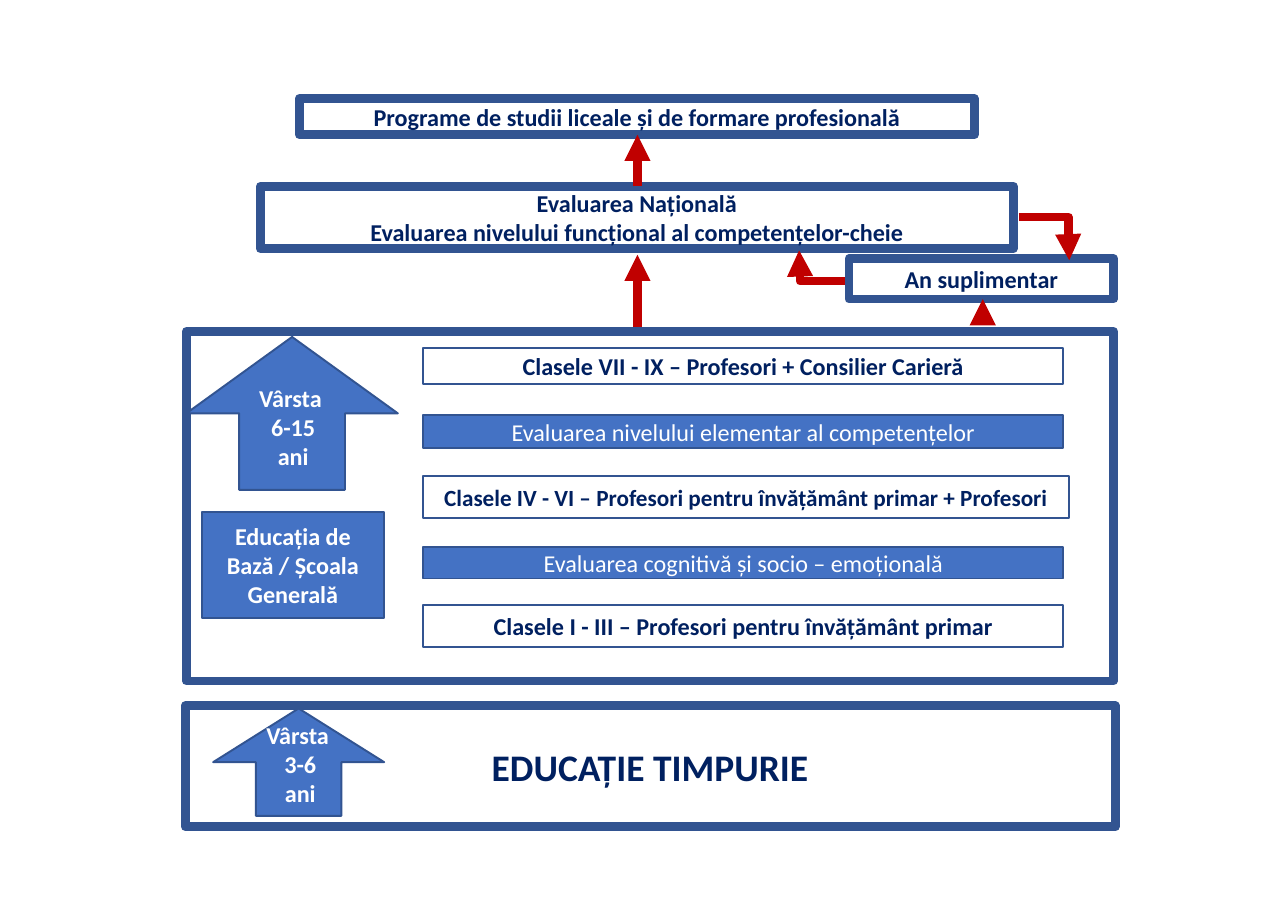
from lxml.etree import SubElement
from pptx import Presentation
from pptx.dml.color import RGBColor
from pptx.enum.shapes import MSO_CONNECTOR as Connector, MSO_SHAPE as Shape
from pptx.enum.text import MSO_ANCHOR as Anchor, MSO_AUTO_SIZE as AutoSize, PP_ALIGN as Align
from pptx.oxml.ns import qn
from pptx.util import Cm, Pt

WHITE, NAVY, BLUE, BORDER, RED = "FFFFFF", "002060", "4472C4", "325491", "C00000"
THICK, THIN = 4.5, 1


def color(value):
    return RGBColor.from_string(value)


def write(shape, lines, size, font_color, bold):
    frame = shape.text_frame
    frame.word_wrap = True
    for index, line in enumerate(lines):
        paragraph = frame.paragraphs[0] if index == 0 else frame.add_paragraph()
        paragraph.alignment = Align.CENTER
        run = paragraph.add_run()
        run.text = line
        run.font.name = "Calibri"
        run.font.size = Pt(size)
        run.font.bold = bold
        run.font.color.rgb = color(font_color)


presentation = Presentation()
presentation.slide_width, presentation.slide_height = Cm(23.5), Cm(16.79)
slide = presentation.slides.add_slide(presentation.slide_layouts[6])

boxes = [
    (15.49, 4.72, 4.83, 0.74, WHITE, THICK, 12.5, ["An suplimentar"]),
    (4.75, 3.4, 13.74, 1.14, WHITE, THICK, 12.5,
     ["Evaluarea Națională", "Evaluarea nivelului funcțional al competențelor-cheie"]),
    (3.4, 6.05, 16.92, 6.38, WHITE, THICK, 12.5, []),
    (5.46, 1.8, 12.32, 0.66, WHITE, THICK, 12.5,
     ["Programe de studii liceale și de formare profesională"]),
    (3.38, 12.88, 16.97, 2.21, WHITE, THICK, 19.4, ["EDUCAȚIE TIMPURIE"]),
    (3.68, 9.35, 3.33, 1.93, BLUE, THIN, 12.5, ["Educația de Bază / Școala Generală"]),
]
stages = [
    (6.35, 11.68, 0.66, WHITE, 12.5, "Clasele VII - IX – Profesori + Consilier Carieră"),
    (7.57, 11.68, 0.61, BLUE, 12.5, "Evaluarea nivelului elementar al competențelor"),
    (8.69, 11.79, 0.76, WHITE, 12, "Clasele IV - VI – Profesori pentru învățământ primar + Profesori"),
    (9.98, 11.68, 0.58, BLUE, 12.5, "Evaluarea cognitivă și socio – emoțională"),
    (11.05, 11.68, 0.76, WHITE, 12.5, "Clasele I - III – Profesori pentru învățământ primar"),
]
age_arrows = [
    (3.4, 6.15, 3.86, 2.79),
    (3.89, 12.93, 3.12, 1.96),
]
age_labels = [
    (4.45, 6.88, 1.8, 2.39, "6-15"),
    (4.45, 13.03, 2.06, 2.44, "3-6"),
]
links = [
    (Connector.STRAIGHT, 11.63, 3.4, 11.63, 2.46, 0),
    (Connector.STRAIGHT, 11.63, 5.97, 11.63, 4.65, 0),
    (Connector.STRAIGHT, 17.93, 5.82, 17.93, 5.46, 0),
    (Connector.ELBOW, 14.58, 4.57, 15.42, 5.13, 180),
    (Connector.ELBOW, 18.59, 3.96, 19.51, 4.75, 0),
]

shapes = [(Shape.RECTANGLE, *box, box[4] == WHITE or box[5] == THIN) for box in boxes]
shapes += [
    (Shape.RECTANGLE, 7.72, top, width, height, fill, THIN, size, [text], fill == WHITE)
    for top, width, height, fill, size, text in stages
]
shapes += [(Shape.UP_ARROW, *place, BLUE, THIN, 12.5, [], True) for place in age_arrows]

for kind, left, top, width, height, fill, border, size, lines, bold in shapes:
    shape = slide.shapes.add_shape(kind, Cm(left), Cm(top), Cm(width), Cm(height))
    shape.shadow.inherit = False
    shape.fill.solid()
    shape.fill.fore_color.rgb = color(fill)
    shape.line.color.rgb = color(BORDER)
    shape.line.width = Pt(border)
    shape.text_frame.vertical_anchor = Anchor.MIDDLE
    write(shape, lines, size, NAVY if fill == WHITE else WHITE, bold)

for left, top, width, height, years in age_labels:
    label = slide.shapes.add_textbox(Cm(left), Cm(top), Cm(width), Cm(height))
    label.text_frame.auto_size = AutoSize.SHAPE_TO_FIT_TEXT
    write(label, ["Vârsta ", years, "ani"], 12.5, WHITE, True)

for kind, start_x, start_y, end_x, end_y, turn in links:
    link = slide.shapes.add_connector(kind, Cm(start_x), Cm(start_y), Cm(end_x), Cm(end_y))
    link.line.color.rgb = color(RED)
    link.line.width = Pt(4.5)
    properties = link._element.spPr
    SubElement(properties.find(qn("a:ln")), qn("a:tailEnd"), type="triangle")
    SubElement(properties, qn("a:effectLst"))
    if turn:
        properties.find(qn("a:xfrm")).set("rot", str(turn * 60000))
    if kind == Connector.ELBOW:
        guides = properties.find(qn("a:prstGeom")).find(qn("a:avLst"))
        SubElement(guides, qn("a:gd"), name="adj1", fmla="val 98000")

presentation.save("out.pptx")
